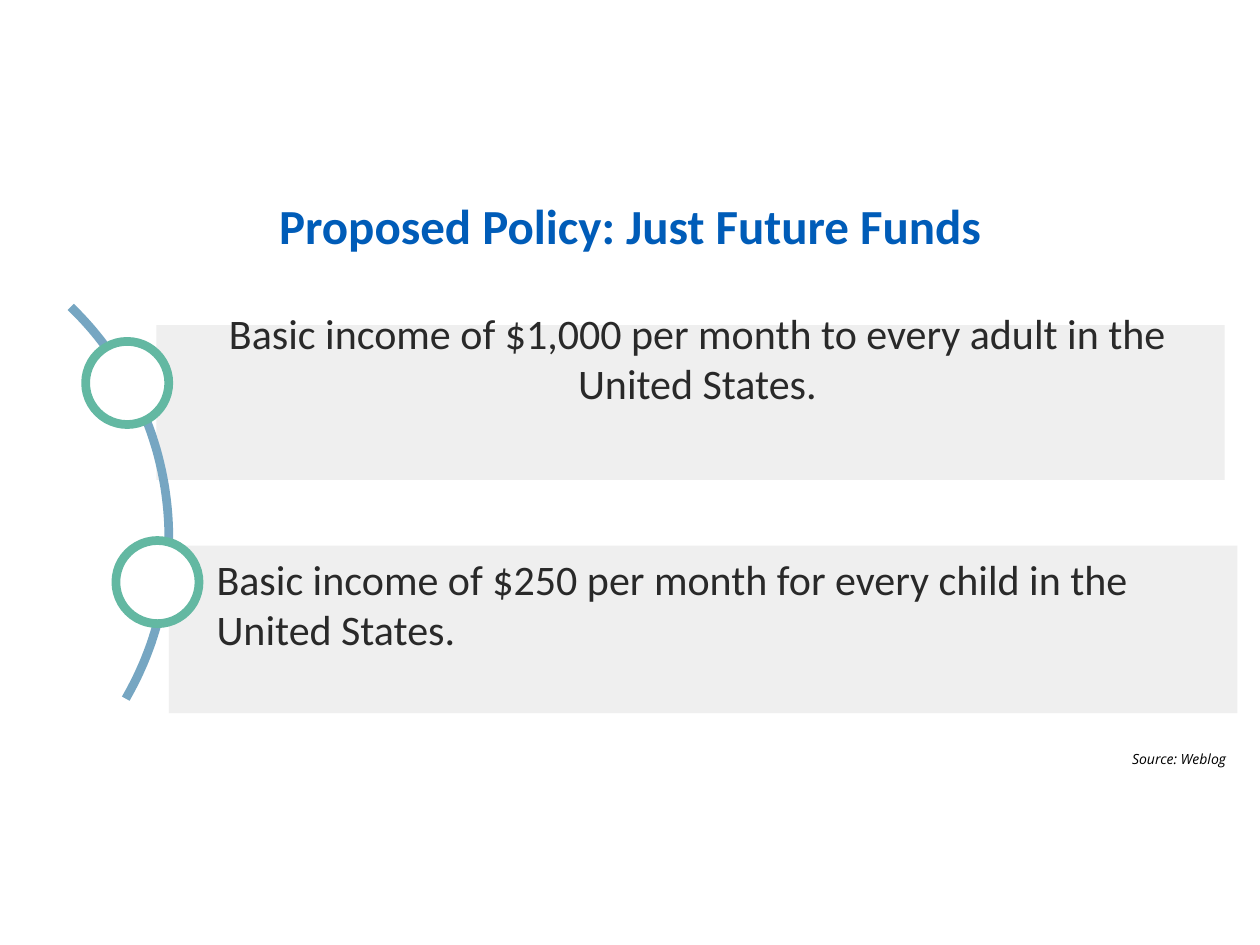
import math
import pptx
import pptx.dml.color
import pptx.enum.shapes
import pptx.enum.text
import pptx.util
from dataclasses import dataclass

COLS, ROWS = 100, 75
CELL = pptx.util.Inches(0.1)
KIND = pptx.enum.shapes.MSO_SHAPE
ALIGN = pptx.enum.text.PP_ALIGN
ANCHOR = pptx.enum.text.MSO_ANCHOR


@dataclass(frozen=True)
class Theme:
    """Colours, fonts and type sizes of the slide."""
    title: str = "005CB8"
    ink: str = "292929"
    black: str = "000000"
    band: str = "EFEFEF"
    white: str = "FFFFFF"
    arc: str = "76A6C2"
    ring: str = "63B8A2"
    main: str = "Calibri"
    note: str = "Open Sans"
    big: int = 28
    mid: int = 24
    small: int = 8
    stroke: int = 5


THEME = Theme()


def grid(*cells):
    """Turn grid cells into slide lengths."""
    return [round(cell * CELL) for cell in cells]


def tint(code):
    """Turn a hex code into a colour."""
    return pptx.dml.color.RGBColor.from_string(code)


def apply(item, form):
    """Set each attribute of the item from a dict."""
    for key, value in form.items():
        setattr(item, key, value)


def paint(shape, fill=None, line=None):
    """Give a shape its fill and line, with no shadow."""
    shape.shadow.inherit = False
    if fill:
        shape.fill.solid()
        shape.fill.fore_color.rgb = tint(fill)
    else:
        shape.fill.background()
    if line:
        shape.line.color.rgb = tint(line)
        shape.line.width = pptx.util.Pt(THEME.stroke)
    else:
        shape.line.fill.background()


def add_form(slide, kind, place, **look):
    """Add a painted preset shape."""
    paint(slide.shapes.add_shape(kind, *grid(*place)), **look)


def add_arc(slide, mid, reach, start, end):
    """Add an open arc between two angles in degrees."""
    dots = []
    for step in range(start, end + 1):
        turn = math.radians(step)
        dots.append(grid(mid[0] + reach * math.cos(turn),
                         mid[1] + reach * math.sin(turn)))
    path = slide.shapes.build_freeform(*dots[0])
    path.add_line_segments(dots[1:], close=False)
    paint(path.convert_to_shape(), line=THEME.arc)


def add_text(slide, place, text, font, color, para, inset=1, anchor=ANCHOR.TOP):
    """Add a wrapped text box with one paragraph."""
    frame = slide.shapes.add_textbox(*grid(*place)).text_frame
    side, edge = grid(1, inset)
    apply(frame, {"word_wrap": True, "vertical_anchor": anchor,
                  "margin_left": side, "margin_right": side,
                  "margin_top": edge, "margin_bottom": edge})
    line = frame.paragraphs[0]
    apply(line, para)
    run = line.add_run()
    run.text = text
    apply(run.font, font)
    run.font.color.rgb = tint(color)


def main():
    """Build and save the slide."""
    deck = pptx.Presentation()
    apply(deck, {"slide_width": COLS * CELL, "slide_height": ROWS * CELL})
    slide = deck.slides.add_slide(deck.slide_layouts[6])

    head = {"name": THEME.main, "size": pptx.util.Pt(THEME.big), "bold": True}
    body = {"name": THEME.main, "size": pptx.util.Pt(THEME.mid)}
    note = {"name": THEME.note, "size": pptx.util.Pt(THEME.small), "italic": True}

    add_text(slide, (5, 10, 90, 12.5), "Proposed Policy: Just Future Funds",
             head, THEME.title,
             {"alignment": ALIGN.CENTER, "line_spacing": pptx.util.Pt(57)},
             inset=0.5, anchor=ANCHOR.MIDDLE)

    for place in ((12.4, 25.8, 84.8, 12.3), (13.4, 43.3, 84.8, 13.3)):
        add_form(slide, KIND.RECTANGLE, place, fill=THEME.band)
    add_arc(slide, (-12.1, 42.7), 25.5, -46, 30)
    for left, top in ((6.8, 27.1), (9.2, 42.9)):
        add_form(slide, KIND.OVAL, (left, top, 6.6, 6.6),
                 fill=THEME.white, line=THEME.ring)

    add_text(slide, (65.5, 58.9, 32.8, 3.4), "Source: Weblog",
             note, THEME.black, {"alignment": ALIGN.RIGHT})
    add_text(slide, (13.4, 23.4, 83.9, 18.6),
             "Basic income of $1,000 per month to every adult in the United States.",
             body, THEME.ink, {"alignment": ALIGN.CENTER})
    add_text(slide, (16.2, 42.9, 83.8, 16.5),
             "Basic income of $250 per month for every child in the United States.",
             body, THEME.ink, {"alignment": ALIGN.LEFT})
    deck.save("out.pptx")


if __name__ == "__main__":
    main()
